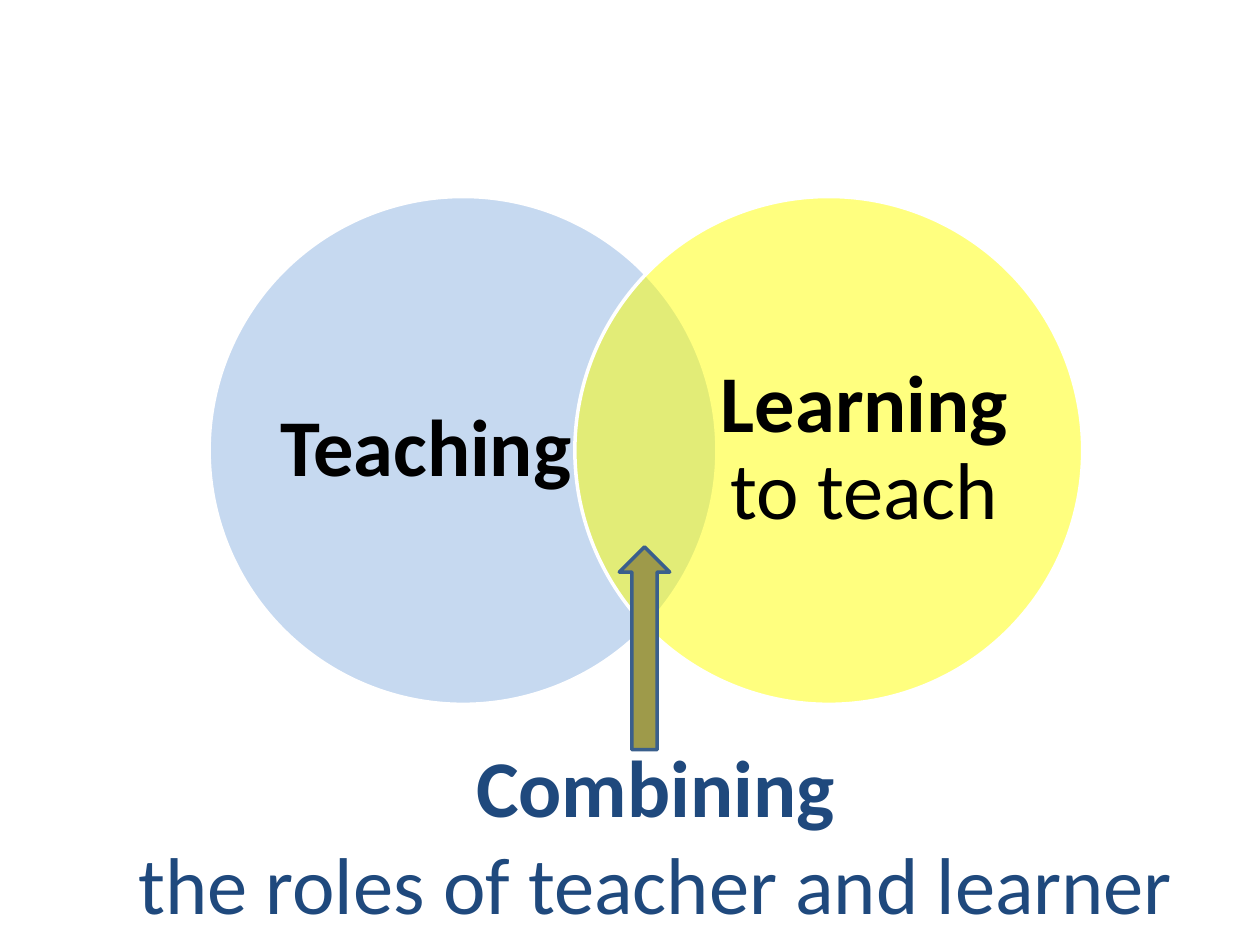
from pptx import Presentation
from pptx.dml.color import RGBColor
from pptx.enum.shapes import MSO_SHAPE
from pptx.enum.text import MSO_ANCHOR, MSO_AUTO_SIZE, PP_ALIGN
from pptx.oxml.ns import qn
from pptx.util import Pt
from lxml import etree

OVAL = MSO_SHAPE.OVAL
ARROW = MSO_SHAPE.UP_ARROW
MIDDLE = MSO_ANCHOR.MIDDLE
TOP = MSO_ANCHOR.TOP
GROW = MSO_AUTO_SIZE.SHAPE_TO_FIT_TEXT
FIXED = MSO_AUTO_SIZE.NONE
CENTER = PP_ALIGN.CENTER

WHITE = RGBColor(0xFF, 0xFF, 0xFF)
BLACK = RGBColor(0x00, 0x00, 0x00)
BLUE = RGBColor(0x8E, 0xB4, 0xE3)
YELLOW = RGBColor(0xFF, 0xFF, 0x00)
NAVY = RGBColor(0x1F, 0x49, 0x7D)
OLIVE = RGBColor(0x9E, 0x9A, 0x4A)
STEEL = RGBColor(0x3A, 0x5F, 0x8C)


def add_form(shapes, kind, box, fill, line, alpha=None):
    form = shapes.add_shape(kind, *map(Pt, box))
    form.shadow.inherit = False
    form.fill.solid()
    form.fill.fore_color.rgb = fill
    form.line.color.rgb = line
    form.line.width = Pt(2)
    if alpha is not None:
        color = form.fill._xPr.find(qn("a:solidFill"))[0]
        etree.SubElement(color, qn("a:alpha"), val=str(alpha * 1000))


def add_text(shapes, box, lines, color=BLACK, size=46, space=None,
             anchor=TOP, inset=None, fit=FIXED):
    text = shapes.add_textbox(*map(Pt, box))
    frame = text.text_frame
    frame.word_wrap = True
    frame.auto_size = fit
    frame.vertical_anchor = anchor
    if inset is not None:
        frame.margin_left = frame.margin_right = Pt(inset)
        frame.margin_top = frame.margin_bottom = Pt(inset)
    for row, runs in enumerate(lines):
        para = frame.add_paragraph() if row else frame.paragraphs[0]
        para.alignment = CENTER
        para.line_spacing = space
        for words, bold in runs:
            run = para.add_run()
            run.text = words
            run.font.name = "Calibri"
            run.font.size = Pt(size)
            run.font.bold = bold
            run.font.color.rgb = color


def add_circle(shapes, left, fill, label, runs):
    add_form(shapes, OVAL, (left, 112.3, 290.2, 290.2), fill, WHITE, alpha=50)
    add_text(shapes, (label, 146.2, 167.1, 221.8), [runs],
             space=0.9, anchor=MIDDLE, inset=0)


def main():
    deck = Presentation()
    deck.slide_width, deck.slide_height = Pt(720), Pt(540)
    shapes = deck.slides.add_slide(deck.slide_layouts[6]).shapes

    group = shapes.add_group_shape().shapes
    add_circle(group, 119.5, BLUE, 159.8, [("Teaching", True)])
    add_circle(group, 328.5, YELLOW, 410.4,
               [("Learning", True), (" to teach", False)])

    add_text(shapes, (59.8, 417.6, 629.3, 118.8),
             [[("Combining", True)],
              [("the roles of teacher and learner", False)]],
             color=NAVY, fit=GROW)
    add_form(shapes, ARROW, (353.9, 312.5, 28.8, 115.9), OLIVE, STEEL)

    deck.save("out.pptx")


if __name__ == "__main__":
    main()
